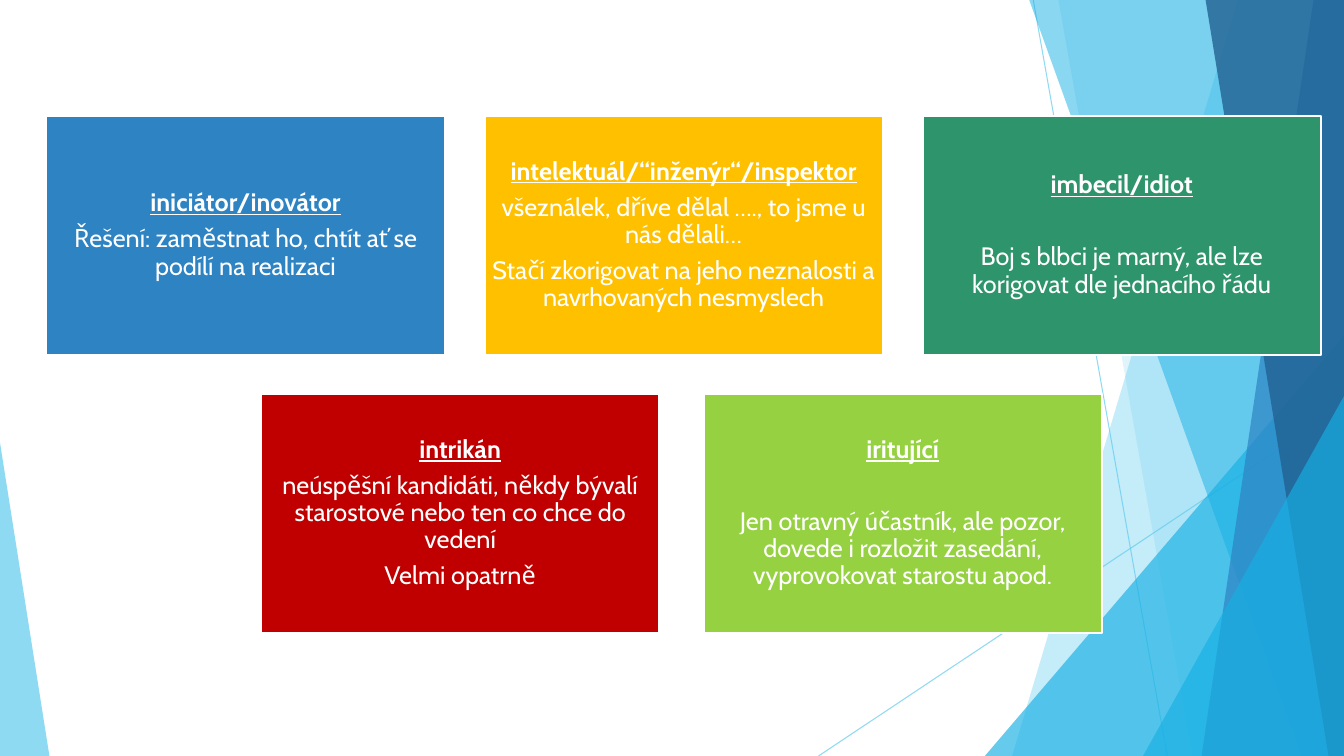
from dataclasses import dataclass

from lxml.etree import SubElement
from pptx import Presentation
from pptx.dml.color import RGBColor
from pptx.enum.shapes import MSO_CONNECTOR, MSO_SHAPE
from pptx.enum.text import MSO_ANCHOR, PP_ALIGN
from pptx.oxml.ns import qn
from pptx.util import Inches, Pt


@dataclass(frozen=True)
class Theme:
    font: str = "Cabin"
    text_size: float = 18
    line_spacing: float = 0.9
    paragraph_gap: float = 6.3
    wide_gap: float = 32
    hairline: float = 0.75
    card_border: float = 1.5
    white: str = "FFFFFF"
    sky: str = "5FCBEF"
    cyan: str = "17B0E4"
    blue: str = "2E83C3"
    navy: str = "226292"
    amber: str = "FFC000"
    green: str = "2E946B"
    red: str = "C00000"
    lime: str = "96D141"


@dataclass(frozen=True)
class CardGrid:
    left: float = 0.46
    top: float = 1.15
    width: float = 3.95
    height: float = 2.37
    column_gap: float = 0.395
    row_gap: float = 0.39

    def cell(self, column, row):
        x = self.left + column * (self.width + self.column_gap)
        y = self.top + row * (self.height + self.row_gap)
        return [Inches(length) for length in (x, y, self.width, self.height)]


def apply(target, formats):
    for name, value in formats.items():
        setattr(target, name, value)


class SlideBuilder:
    """Holds the theme and slide; decoration takes percentages of the slide size."""

    def __init__(self, deck, theme, grid):
        self.deck, self.theme, self.grid = deck, theme, grid
        self.slide = deck.slides.add_slide(deck.slide_layouts[6])
        self.shapes = self.slide.shapes

    def point(self, x, y):
        return (round(self.deck.slide_width * x / 100),
                round(self.deck.slide_height * y / 100))

    def set_opacity(self, shape, percent):
        for color in shape.element.spPr.iter(qn("a:srgbClr")):
            SubElement(color, qn("a:alpha")).set("val", str(percent * 1000))

    def paint(self, shape, color):
        shape.shadow.inherit = False
        shape.fill.solid()
        shape.fill.fore_color.rgb = RGBColor.from_string(color)

    def facet(self, shape, color, opacity):
        self.paint(shape, color)
        shape.line.fill.background()
        self.set_opacity(shape, opacity)

    def ray(self, start, end):
        ray = self.shapes.add_connector(
            MSO_CONNECTOR.STRAIGHT, *self.point(*start), *self.point(*end))
        ray.line.width = Pt(self.theme.hairline)
        ray.line.color.rgb = RGBColor.from_string(self.theme.sky)
        self.set_opacity(ray, 70)
        SubElement(ray.element.spPr, qn("a:effectLst"))

    def band(self, top_x, bottom_x, color, opacity):
        """Fills from a slanted left edge to the slide's right edge."""
        outline = self.shapes.build_freeform(*self.point(top_x, 0), scale=1.0)
        corners = [(100, 0), (100, 100), (bottom_x, 100)]
        outline.add_line_segments([self.point(*corner) for corner in corners])
        self.facet(outline.convert_to_shape(), color, opacity)

    def wedge(self, left, right, top, peak, color, opacity):
        """Triangle standing on the bottom edge; peak 0 is left, 1 is right."""
        x, y = self.point(left, top)
        end_x, end_y = self.point(right, 100)
        wedge = self.shapes.add_shape(
            MSO_SHAPE.ISOSCELES_TRIANGLE, x, y, end_x - x, end_y - y)
        wedge.adjustments[0] = peak
        self.facet(wedge, color, opacity)

    def card(self, column, row, color, heading, advice, heading_gap):
        theme = self.theme
        card = self.shapes.add_shape(
            MSO_SHAPE.RECTANGLE, *self.grid.cell(column, row))
        self.paint(card, color)
        card.line.color.rgb = RGBColor.from_string(theme.white)
        card.line.width = Pt(theme.card_border)
        margins = ("margin_left", "margin_top", "margin_right", "margin_bottom")
        frame = card.text_frame
        apply(frame, {"word_wrap": True, "vertical_anchor": MSO_ANCHOR.MIDDLE,
                      **dict.fromkeys(margins, Inches(0.07))})
        for index, text in enumerate([heading, *advice]):
            is_heading = index == 0
            paragraph = frame.paragraphs[0] if is_heading else frame.add_paragraph()
            gap = heading_gap if is_heading else theme.paragraph_gap
            apply(paragraph, {"alignment": PP_ALIGN.CENTER, "space_after": Pt(gap),
                              "line_spacing": theme.line_spacing})
            run = paragraph.add_run()
            run.text = text
            apply(run.font, {"name": theme.font, "size": Pt(theme.text_size),
                             "bold": is_heading, "underline": is_heading})
            run.font.color.rgb = RGBColor.from_string(theme.white)


def main():
    deck = Presentation()
    deck.slide_width, deck.slide_height = Inches(13.33), Inches(7.5)
    theme = Theme()
    builder = SlideBuilder(deck, theme, CardGrid())

    # Faceted background
    builder.ray((76.88, 0), (86.85, 100))
    builder.ray((100, 53.73), (60.9, 100))
    builder.band(92.1, 75.3, theme.sky, 36)
    builder.band(78.75, 88.73, theme.sky, 20)
    builder.wedge(73.28, 100, 44.4, 1, theme.cyan, 66)
    builder.band(76.58, 96.83, theme.cyan, 50)
    builder.band(97.73, 89.4, theme.blue, 70)
    builder.band(89.7, 98.85, theme.navy, 80)
    builder.wedge(85.05, 100, 52.4, 1, theme.cyan, 66)
    builder.wedge(0, 3.68, 58.53, 0, theme.sky, 70)

    # Participant types: column, row, colour, heading, advice, gap below heading
    participants = [
        (0, 0, theme.blue, "iniciátor/inovátor",
         ["Řešení: zaměstnat ho, chtít ať se podílí na realizaci"],
         theme.paragraph_gap),
        (1, 0, theme.amber, "intelektuál/“inženýr“/inspektor",
         ["všeználek, dříve dělal …., to jsme u nás dělali…",
          "Stačí zkorigovat na jeho neznalosti a navrhovaných nesmyslech"],
         theme.paragraph_gap),
        (2, 0, theme.green, "imbecil/idiot",
         ["Boj s blbci je marný, ale lze korigovat dle jednacího řádu"],
         theme.wide_gap),
        (0.49, 1, theme.red, "intrikán",
         ["neúspěšní kandidáti, někdy bývalí starostové nebo ten co chce do vedení",
          "Velmi opatrně"],
         theme.paragraph_gap),
        (1.5, 1, theme.lime, "iritující",
         ["Jen otravný účastník, ale pozor, dovede i rozložit zasedání, "
          "vyprovokovat starostu apod."],
         theme.wide_gap),
    ]
    for participant in participants:
        builder.card(*participant)

    deck.save("out.pptx")


if __name__ == "__main__":
    main()
